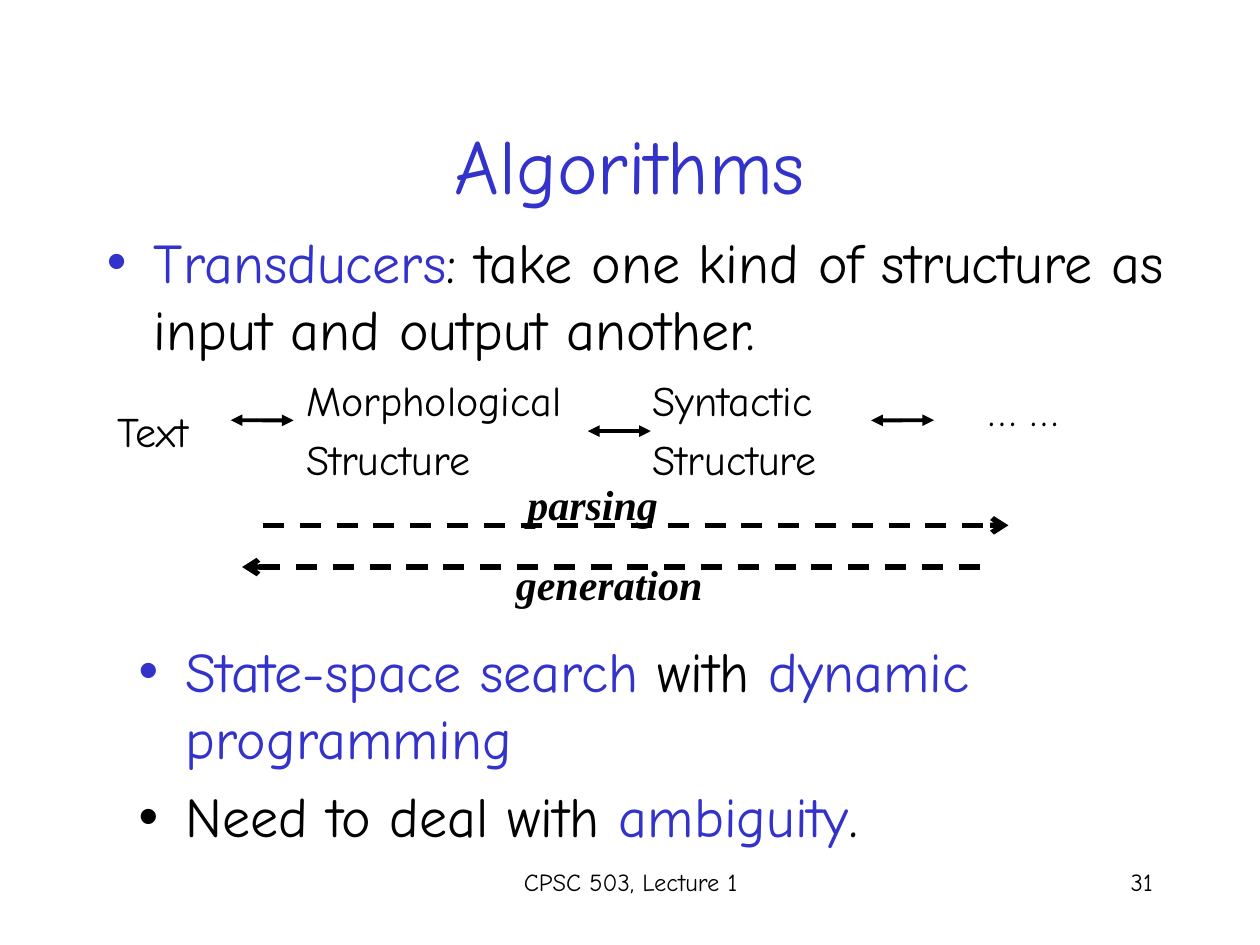
import pptx
import pptx.dml.color
import pptx.enum.dml
import pptx.enum.shapes
import pptx.enum.text
import pptx.oxml
import pptx.oxml.ns
import pptx.util
from lxml import etree

Cm, Pt = pptx.util.Cm, pptx.util.Pt
ALIGN = pptx.enum.text.PP_ALIGN
ANCHOR = pptx.enum.text.MSO_ANCHOR
BLACK = pptx.dml.color.RGBColor(0x00, 0x00, 0x00)
BLUE = pptx.dml.color.RGBColor(0x33, 0x33, 0xCC)

TITLE = {"name": "Comic Neue", "size": Pt(44)}
LIST = {"name": "Comic Neue", "size": Pt(32)}
STAGE = {"name": "Comic Neue", "size": Pt(24)}
FOOTER = {"name": "Comic Neue", "size": Pt(14)}
DIRECTION = {"name": "Times New Roman", "size": Pt(24), "bold": True, "italic": True}
HANGING = Cm(0.95)


def add_run(paragraph, text, formats, color=BLACK):
    run = paragraph.add_run()
    run.text = text
    for name, value in formats.items():
        setattr(run.font, name, value)
    run.font.color.rgb = color


def place(shape, box):
    for name, value in zip(("left", "top", "width", "height"), box):
        setattr(shape, name, Cm(value))


def add_label(slide, box, lines, formats, align=ALIGN.LEFT, space=0, wrap=True):
    """Add a text box with one paragraph for each line."""
    shape = slide.shapes.add_textbox(*(Cm(value) for value in box))
    frame = shape.text_frame
    frame.word_wrap = wrap
    for index, line in enumerate(lines):
        paragraph = frame.add_paragraph() if index else frame.paragraphs[0]
        paragraph.alignment = align
        paragraph.space_before = Pt(space)
        add_run(paragraph, line, formats)
    return shape


def add_arrow(slide, start, end, width, head=None, tail=None, dashed=False):
    """Add a line with arrowheads at its start (head) and end (tail)."""
    line = slide.shapes.add_connector(
        pptx.enum.shapes.MSO_CONNECTOR.STRAIGHT,
        *(Cm(value) for value in (*start, *end)))
    line.line.color.rgb = BLACK
    line.line.width = Pt(width)
    if dashed:
        line.line.dash_style = pptx.enum.dml.MSO_LINE.DASH
    outline = line.line._get_or_add_ln()
    for tag, kind in (("a:headEnd", head), ("a:tailEnd", tail)):
        if kind:
            etree.SubElement(outline, pptx.oxml.ns.qn(tag), type=kind)
    etree.SubElement(line._element.spPr, pptx.oxml.ns.qn("a:effectLst"))
    return line


def fill_title(shape, box, text):
    place(shape, box)
    frame = shape.text_frame
    frame.auto_size = pptx.enum.text.MSO_AUTO_SIZE.NONE
    frame.vertical_anchor = ANCHOR.MIDDLE
    frame.paragraphs[0].alignment = ALIGN.CENTER
    add_run(frame.paragraphs[0], text, TITLE, BLUE)


def fill_list(shape, box, items):
    """Fill a placeholder with bulleted items, each a list of (text, color)."""
    place(shape, box)
    frame = shape.text_frame
    frame.auto_size = pptx.enum.text.MSO_AUTO_SIZE.NONE
    frame.vertical_anchor = ANCHOR.TOP
    for index, item in enumerate(items):
        paragraph = frame.add_paragraph() if index else frame.paragraphs[0]
        paragraph.space_before = Pt(6.4)
        properties = paragraph._p.get_or_add_pPr()
        properties.set("marL", str(HANGING))
        properties.set("indent", str(-HANGING))
        etree.SubElement(properties, pptx.oxml.ns.qn("a:buChar"), char="•")
        for text, color in item:
            add_run(paragraph, text, LIST, color)


def add_stages(slide, left, top):
    """Place the chain of structures with two-way arrows between them."""
    stages = [
        (0, 0.63, 2.54, 1.48, ["Text"]),
        (3.81, 0, 6.14, 2.11, ["Morphological", "Structure"]),
        (10.8, 0, 4.65, 2.11, ["Syntactic", "Structure"]),
        (17.57, 0.21, 2.54, 2.11, ["… …"]),
    ]
    _, morphological, syntactic, _ = [
        add_label(slide, (left + x, top + y, width, height), lines, STAGE, space=4.8)
        for x, y, width, height, lines in stages]
    length = 1.27
    first, _, last = [
        add_arrow(slide, (left + x, top + y), (left + x + length, top + y),
                  2.25, "triangle", "triangle")
        for x, y in ((2.54, 1.05), (9.74, 1.27), (15.45, 1.05))]
    first.end_connect(morphological, 1)
    last.begin_connect(syntactic, 3)


def add_directions(slide, left, top):
    """Place the dashed parsing and generation arrows with their labels."""
    length = 15.03
    for x, y, ends in ((0.42, 1.06, {"tail": "arrow"}), (0, 1.9, {"head": "arrow"})):
        add_arrow(slide, (left + x, top + y), (left + x + length, top + y),
                  3, dashed=True, **ends)
    for x, y, width, text in ((5.5, 0, 3.15, "parsing"), (5.27, 1.6, 4.27, "generation")):
        add_label(slide, (left + x, top + y, width, 1.27), [text], DIRECTION, wrap=False)


def add_footer(slide, left, top):
    add_label(slide, (left, top, 8.05, 1.27), ["CPSC 503, Lecture 1"], FOOTER, ALIGN.CENTER)
    add_label(slide, (left + 9.52, top, 5.28, 1.27), ["31"], FOOTER, ALIGN.RIGHT)


def main():
    presentation = pptx.Presentation()
    presentation.slide_width, presentation.slide_height = Cm(25.4), Cm(19.05)
    two_content = presentation.slide_layouts[3]
    slide = presentation.slides.add_slide(two_content)
    title, transducers, methods = slide.placeholders

    fill_title(title, (1.9, 1.7, 21.6, 3.18), "Algorithms")
    fill_list(transducers, (1.9, 4.45, 22.65, 2.97), [
        [("Transducers", BLUE),
         (": take one kind of structure as input and output another.", BLACK)],
    ])
    fill_list(methods, (2.54, 12.7, 21.6, 4.88), [
        [("State-space search", BLUE), (" with ", BLACK), ("dynamic programming", BLUE)],
        [("Need to deal with ", BLACK), ("ambiguity", BLUE), (".", BLACK)],
    ])
    add_stages(slide, 2.11, 7.42)
    add_directions(slide, 4.88, 9.53)
    add_footer(slide, 8.69, 17.35)
    presentation.save("out.pptx")


if __name__ == "__main__":
    main()
